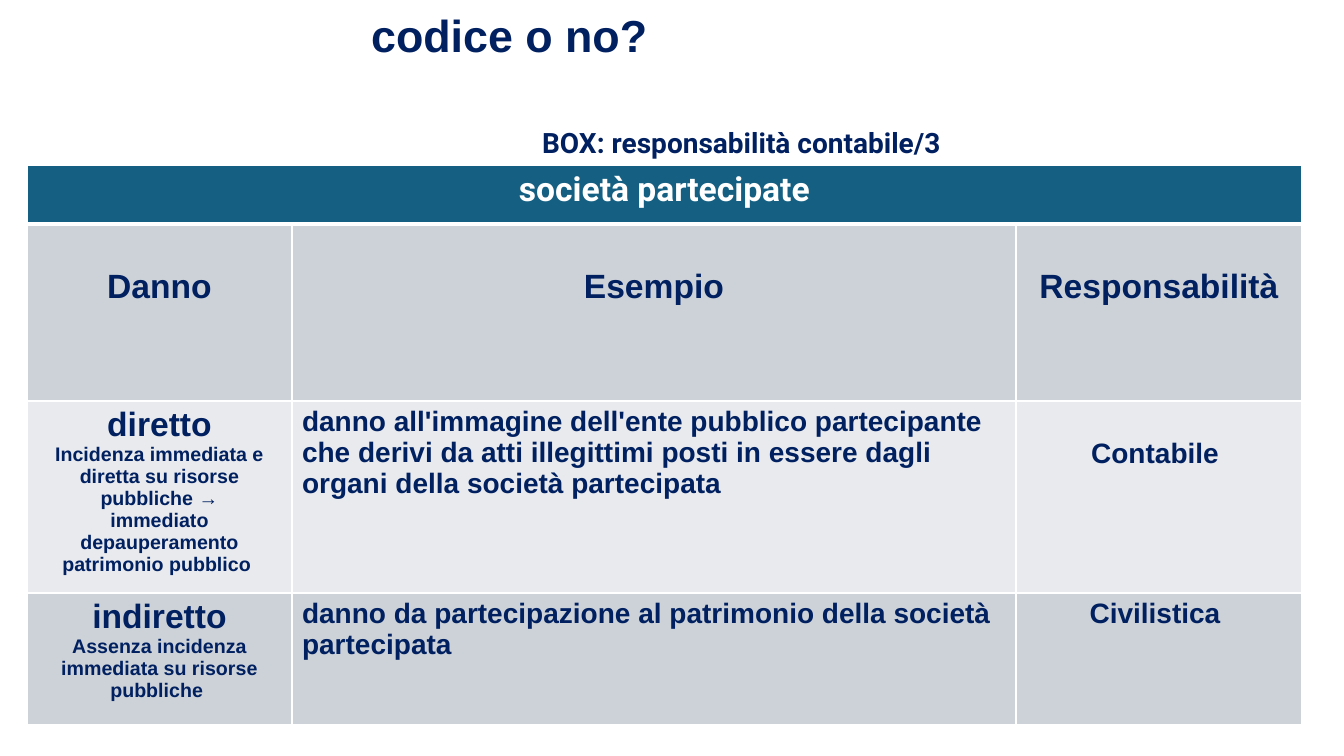
from dataclasses import dataclass

import pptx
import pptx.dml.color
import pptx.enum.text
import pptx.oxml
import pptx.oxml.ns
import pptx.util

RGB = pptx.dml.color.RGBColor
ALIGN = pptx.enum.text.PP_ALIGN
TOP = pptx.enum.text.MSO_ANCHOR.TOP

NAVY = RGB(0x00, 0x20, 0x60)
WHITE = RGB(0xFF, 0xFF, 0xFF)
TEAL = RGB(0x15, 0x60, 0x82)
GREY = RGB(0xCC, 0xD2, 0xD8)
PALE = RGB(0xE8, 0xEA, 0xED)

SCALE = 12192000 / 1344  # EMU in one px
WIDE, HIGH = 1344, 756
COLS = (265, 724, 286)
ROWS = (59, 177, 192, 132)
PAD = 5  # usual top margin of a cell


@dataclass(frozen=True)
class Line:
    text: str
    size: int
    font: str = "Arial"
    color: RGB = NAVY
    align: ALIGN = ALIGN.CENTER


@dataclass(frozen=True)
class Cell:
    lines: tuple[Line, ...]
    fill: RGB
    drop: int = 0  # extra px above the text


def px(count: int) -> pptx.util.Emu:
    return pptx.util.Emu(round(count * SCALE))


def write(frame, lines: tuple[Line, ...]) -> None:
    for index, line in enumerate(lines):
        par = frame.add_paragraph() if index else frame.paragraphs[0]
        par.alignment = line.align
        par.line_spacing = 1.0
        par.space_before = pptx.util.Pt(0)
        run = par.add_run()
        run.text = line.text
        run.font.size = pptx.util.Pt(line.size)
        run.font.name = line.font
        run.font.bold = True
        run.font.color.rgb = line.color


def place(shape, left: int, top: int, width: int, height: int) -> None:
    shape.left, shape.top = px(left), px(top)
    shape.width, shape.height = px(width), px(height)


def edge(cell, side: str, points: int) -> None:
    space = pptx.oxml.ns.nsdecls("a")
    width = pptx.util.Pt(points)
    cell._tc.get_or_add_tcPr().append(pptx.oxml.parse_xml(
        f'<a:ln{side} {space} w="{width}"><a:solidFill>'
        f'<a:srgbClr val="{WHITE}"/></a:solidFill></a:ln{side}>'))


def paint(cell, data: Cell) -> None:
    cell.fill.solid()
    cell.fill.fore_color.rgb = data.fill
    cell.vertical_anchor = TOP
    cell.margin_top = px(PAD + data.drop)
    write(cell.text_frame, data.lines)


def sample(text: str) -> Line:
    return Line(text, 20, align=ALIGN.LEFT)


HEAD = Cell((Line("società partecipate", 24, "Roboto", WHITE),), TEAL)
BODY = (
    tuple(Cell((Line(name, 24),), GREY, 39)
          for name in ("Danno", "Esempio", "Responsabilità")),
    (
        Cell((Line("diretto", 24),
              Line("Incidenza immediata e diretta su risorse pubbliche →", 14),
              Line("immediato depauperamento patrimonio pubblico ", 14)), PALE),
        Cell((sample("danno all'immagine dell'ente pubblico partecipante che "
                     "derivi da atti illegittimi posti in essere dagli organi "
                     "della società partecipata"),), PALE),
        Cell((Line("Contabile ", 20),), PALE, 32),
    ),
    (
        Cell((Line("indiretto", 24),
              Line("Assenza incidenza immediata su risorse pubbliche ", 14)),
             GREY),
        Cell((sample("danno da partecipazione al patrimonio della società "
                     "partecipata"),), GREY),
        Cell((Line("Civilistica ", 20),), GREY),
    ),
)


def main() -> None:
    deck = pptx.Presentation()
    deck.slide_width, deck.slide_height = px(WIDE), px(HIGH)
    slide = deck.slides.add_slide(deck.slide_layouts[5])

    # Title
    title = slide.shapes.title
    place(title, 361, 3, 983, 65)
    title.text_frame.vertical_anchor = TOP
    title.text_frame.word_wrap = True
    write(title.text_frame, (Line("codice o no?", 32, align=ALIGN.LEFT),))

    # Caption above the table
    box = slide.shapes.add_textbox(px(180), px(121), px(1123), px(44))
    box.text_frame.word_wrap = True
    write(box.text_frame,
          (Line("BOX: responsabilità contabile/3", 20, "Roboto"),))

    # Table grid
    table = slide.shapes.add_table(len(ROWS), len(COLS), px(27), px(165),
                                   px(sum(COLS)), px(sum(ROWS))).table
    for column, width in zip(table.columns, COLS):
        column.width = px(width)
    for row, height in zip(table.rows, ROWS):
        row.height = px(height)

    # Borders: a thick rule under the heading row
    for index, row in enumerate(table.rows):
        for cell in row.cells:
            for side in "LRTB":
                thick = (index, side) in ((0, "B"), (1, "T"))
                edge(cell, side, 3 if thick else 1)

    # Table contents
    table.cell(0, 0).merge(table.cell(0, len(COLS) - 1))
    paint(table.cell(0, 0), HEAD)
    for index, row in enumerate(BODY, start=1):
        for place_no, data in enumerate(row):
            paint(table.cell(index, place_no), data)

    deck.save("out.pptx")


if __name__ == "__main__":
    main()
